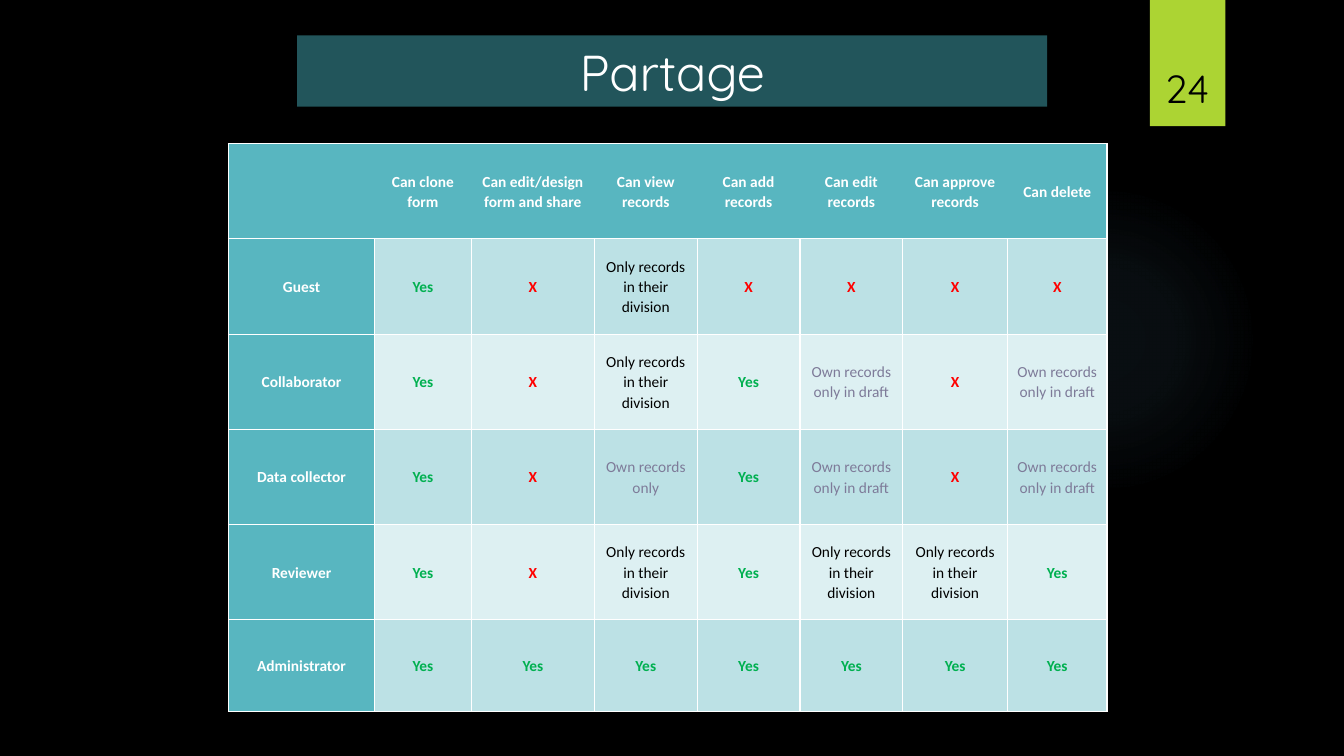
from lxml import etree
from pptx import Presentation
from pptx.dml.color import RGBColor
from pptx.enum.shapes import MSO_SHAPE as SHAPE
from pptx.enum.text import MSO_ANCHOR as ANCHOR, MSO_AUTO_SIZE as AUTO, PP_ALIGN as ALIGN
from pptx.oxml import parse_xml
from pptx.oxml.ns import nsdecls, qn
from pptx.util import Cm, Pt

BLACK = RGBColor(0x00, 0x00, 0x00)
WHITE = RGBColor(0xFF, 0xFF, 0xFF)
LIME = RGBColor(0xAC, 0xD4, 0x33)
DEEP_TEAL = RGBColor(0x3A, 0x8F, 0x98)
TEAL = RGBColor(0x58, 0xB6, 0xC0)
BAND_DARK = RGBColor(0xBC, 0xE1, 0xE5)
BAND_LIGHT = RGBColor(0xDD, 0xF0, 0xF2)
GREEN = RGBColor(0x00, 0xB0, 0x50)
RED = RGBColor(0xFF, 0x00, 0x00)
MAUVE = RGBColor(0x7E, 0x7B, 0x99)
SKY = RGBColor(0x7A, 0xC4, 0xF0)

YES, NO = "Yes", "X"
DIVISION = "Only records in their division"
OWN = "Own records only"
DRAFT = "Own records only in draft"

RIGHTS = [
    ["", "Can clone form", "Can edit/design form and share", "Can view records",
     "Can add records", "Can edit records", "Can approve records", "Can delete"],
    ["Guest", YES, NO, DIVISION, NO, NO, NO, NO],
    ["Collaborator", YES, NO, DIVISION, YES, DRAFT, NO, DRAFT],
    ["Data collector", YES, NO, OWN, YES, DRAFT, NO, DRAFT],
    ["Reviewer", YES, NO, DIVISION, YES, DIVISION, DIVISION, YES],
    ["Administrator"] + [YES] * 7,
]
# Colour and weight of each kind of answer
ANSWER_STYLES = {YES: (GREEN, True), NO: (RED, True), DIVISION: (BLACK, False),
                 OWN: (MAUVE, False), DRAFT: (MAUVE, False)}
COL_WIDTHS = [3.68, 2.44, 3.1, 2.59, 2.59, 2.59, 2.64, 2.51]
ROW_HEIGHTS = [2.4] * 5 + [2.3]


def format_text(tf, font, size, color, bold=False):
    p = tf.paragraphs[0]
    p.alignment = ALIGN.CENTER
    for r in p.runs:
        r.font.name, r.font.size, r.font.bold = font, Pt(size), bold
        r.font.color.rgb = color
    return p


def add_plain_shape(s, kind, left, top, width, height, color):
    sp = s.shapes.add_shape(kind, Cm(left), Cm(top), Cm(width), Cm(height))
    sp.shadow.inherit = False
    sp.line.fill.background()
    sp.fill.solid()
    sp.fill.fore_color.rgb = color
    return sp


def add_glow(s):
    sp = add_plain_shape(s, SHAPE.OVAL, 23.9, 4.65, 7.82, 7.82, SKY)
    stops = "".join(
        f'<a:gs pos="{pos * 1000}"><a:srgbClr val="{SKY}">'
        f'<a:alpha val="{alpha * 1000}"/></a:srgbClr></a:gs>'
        for pos, alpha in [(0, 7), (36, 6), (69, 0), (100, 0)])
    gradient = parse_xml(
        f'<a:gradFill {nsdecls("a")} rotWithShape="1"><a:gsLst>{stops}</a:gsLst>'
        '<a:path path="circle"><a:fillToRect l="50000" t="50000" r="50000" b="50000"/>'
        '</a:path></a:gradFill>')
    solid = sp.fill._xPr.find(qn("a:solidFill"))
    solid.getparent().replace(solid, gradient)


def add_page_tab(s, number):
    add_plain_shape(s, SHAPE.RECTANGLE, 28.98, 0, 1.9, 3.18, LIME)
    sp = s.shapes.add_textbox(Cm(28.75), Cm(0.81), Cm(2.34), Cm(2.13))
    tf = sp.text_frame
    tf.word_wrap = True
    tf.vertical_anchor = ANCHOR.BOTTOM
    tf.text = number
    format_text(tf, "Quicksand", 28, BLACK)


def format_title(title, text):
    title.left, title.top, title.width, title.height = Cm(7.49), Cm(0.89), Cm(18.9), Cm(1.8)
    title.fill.solid()
    title.fill.fore_color.rgb = DEEP_TEAL
    color = title.fill._xPr.find(qn("a:solidFill"))[0]
    etree.SubElement(color, qn("a:alpha"), val="60000")
    tf = title.text_frame
    tf.text = text
    tf.auto_size = AUTO.NONE
    tf.vertical_anchor = ANCHOR.MIDDLE
    format_text(tf, "Quicksand", 36, WHITE)


def set_borders(cell, hidden):
    tcPr = cell._tc.get_or_add_tcPr()
    for side in "LRTB":
        fill = ("<a:noFill/>" if side in hidden
                else f'<a:solidFill><a:srgbClr val="{WHITE}"/></a:solidFill>')
        tcPr.append(parse_xml(f'<a:ln{side} {nsdecls("a")} w="12700">{fill}</a:ln{side}>'))


def fill_cell(cell, text, row, col):
    # The header row has no inner vertical lines
    last = len(COL_WIDTHS) - 1
    hidden = ("L" if col > 0 else "") + ("R" if col < last else "") if row == 0 else ""
    set_borders(cell, hidden)
    heading = row == 0 or col == 0
    cell.fill.solid()
    cell.fill.fore_color.rgb = TEAL if heading else BAND_DARK if row % 2 else BAND_LIGHT
    cell.margin_left = cell.margin_right = Cm(0.18)
    cell.margin_top = cell.margin_bottom = 0
    cell.vertical_anchor = ANCHOR.MIDDLE
    cell.text_frame.text = text
    color, bold = (WHITE, True) if heading else ANSWER_STYLES[text]
    p = format_text(cell.text_frame, "Calibri", 11, color, bold)
    p.line_spacing = 1.07


def add_rights_table(s):
    frame = s.shapes.add_table(len(RIGHTS), len(COL_WIDTHS), Cm(5.76), Cm(3.62),
                               Cm(sum(COL_WIDTHS)), Cm(sum(ROW_HEIGHTS)))
    table = frame.table
    for column, width in zip(table.columns, COL_WIDTHS):
        column.width = Cm(width)
    for row, height in zip(table.rows, ROW_HEIGHTS):
        row.height = Cm(height)
    for i, texts in enumerate(RIGHTS):
        for j, text in enumerate(texts):
            fill_cell(table.cell(i, j), text, i, j)


def main():
    prs = Presentation()
    prs.slide_width, prs.slide_height = Cm(33.87), Cm(19.05)
    s = prs.slides.add_slide(prs.slide_layouts[5])
    s.background.fill.solid()
    s.background.fill.fore_color.rgb = BLACK

    # Backdrop and page number
    add_glow(s)
    add_page_tab(s, "24")

    # Title and table of rights
    format_title(s.shapes.title, "Partage")
    add_rights_table(s)

    prs.save("out.pptx")


if __name__ == "__main__":
    main()
